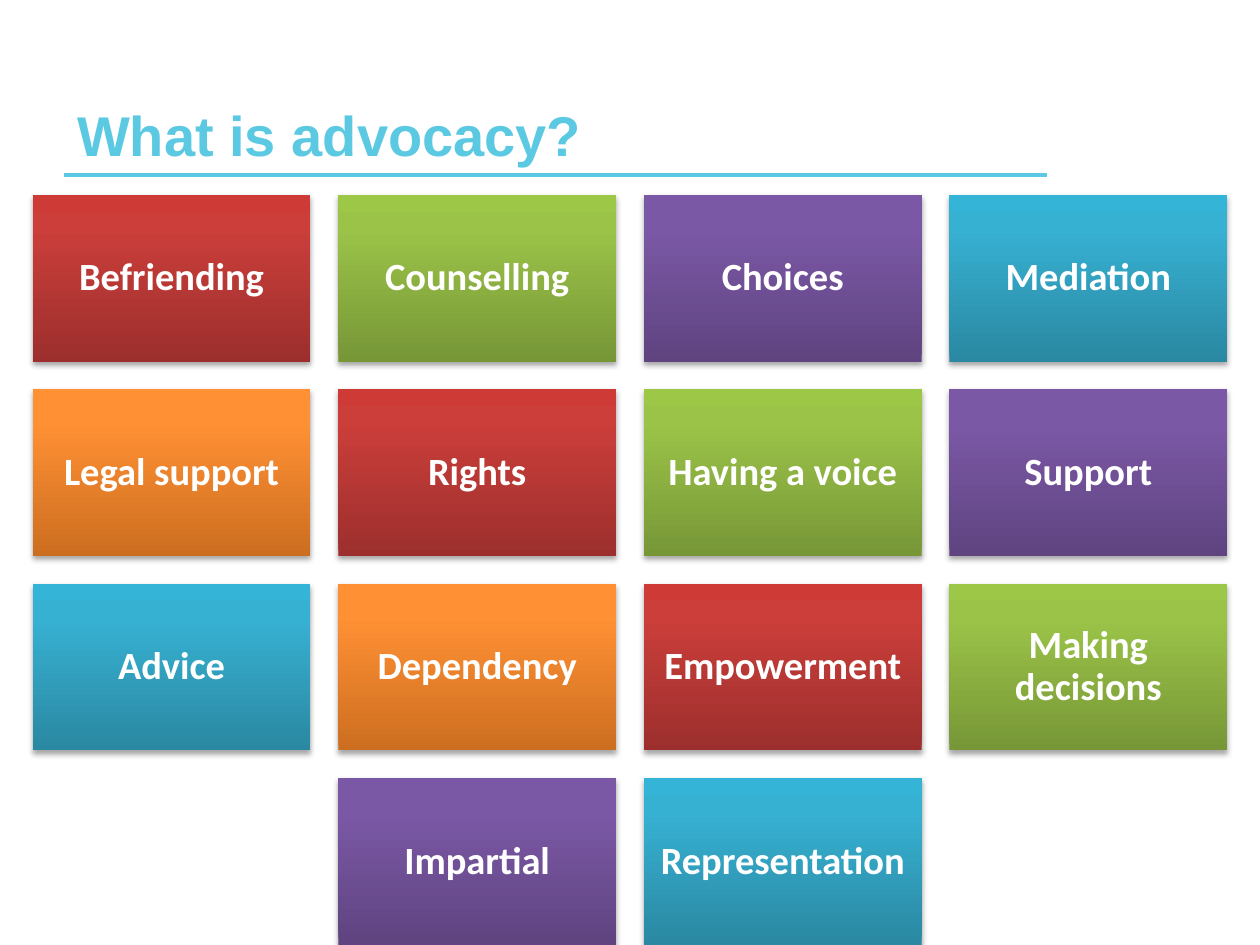
"""Build a slide of coloured tiles on the meaning of advocacy."""
from copy import deepcopy
from dataclasses import dataclass

from pptx import Presentation
from pptx.dml.color import RGBColor as Rgb
from pptx.enum.shapes import MSO_CONNECTOR as Link, MSO_SHAPE as Form
from pptx.enum.text import MSO_ANCHOR as Anchor, PP_ALIGN as Align
from pptx.oxml import parse_xml
from pptx.oxml.ns import nsdecls, qn
from pptx.slide import Slide
from pptx.text.text import TextFrame
from pptx.util import Cm, Pt

SKY = Rgb(0x5C, 0xC9, 0xE3)
WHITE = Rgb(0xFF, 0xFF, 0xFF)
RED = (Rgb(0x9C, 0x2F, 0x2D), Rgb(0xCB, 0x3E, 0x3A), Rgb(0xCE, 0x3B, 0x37))
GREEN = (Rgb(0x77, 0x97, 0x37), Rgb(0x9B, 0xC3, 0x48), Rgb(0x9D, 0xC7, 0x46))
PURPLE = (Rgb(0x5F, 0x44, 0x80), Rgb(0x7B, 0x58, 0xA6), Rgb(0x7C, 0x57, 0xA8))
BLUE = (Rgb(0x2A, 0x88, 0xA2), Rgb(0x37, 0xB1, 0xD2), Rgb(0x34, 0xB4, 0xD6))
ORANGE = (Rgb(0xCC, 0x6E, 0x20), Rgb(0xFF, 0x90, 0x34), Rgb(0xFF, 0x91, 0x36))
HUES = (RED, GREEN, PURPLE, BLUE, ORANGE)
STOPS = (0, 0.8, 1)

COLS = 4
LEFT, TOP = 0.66, 3.93
WIDE, HIGH = 5.6, 3.36
STEP_X, STEP_Y = 6.16, 3.92
EDGE, END, RULE = 1.3, 21.11, 3.53

WORDS = (
    "Befriending", "Counselling", "Choices", "Mediation",
    "Legal support", "Rights", "Having a voice", "Support",
    "Advice", "Dependency", "Empowerment", "Making decisions",
    "Impartial", "Representation",
)
SHADE = (
    f'<a:effectLst {nsdecls("a")}><a:outerShdw blurRad="40000" dist="23000" '
    'dir="5400000" rotWithShape="0"><a:srgbClr val="000000">'
    '<a:alpha val="35000"/></a:srgbClr></a:outerShdw></a:effectLst>'
)


@dataclass(frozen=True)
class Tile:
    """A word with its place and its gradient."""
    text: str
    left: float
    top: float
    hue: tuple[Rgb, ...]


def plan() -> list[Tile]:
    """Lay the words out in rows, with a short last row centred."""
    tiles = []
    for i, word in enumerate(WORDS):
        row, col = divmod(i, COLS)
        count = min(COLS, len(WORDS) - row * COLS)
        left = LEFT + (col + (COLS - count) / 2) * STEP_X
        tiles.append(Tile(word, left, TOP + row * STEP_Y, HUES[i % len(HUES)]))
    return tiles


def write(frame: TextFrame, text: str, face: str, size: int, ink: Rgb,
          align: Align, anchor: Anchor) -> None:
    """Put one bold run in a frame."""
    frame.word_wrap = True
    frame.vertical_anchor = anchor
    para = frame.paragraphs[0]
    para.alignment = align
    run = para.add_run()
    run.text = text
    font = run.font
    font.name, font.size, font.bold = face, Pt(size), True
    font.color.rgb = ink


def draw_tile(slide: Slide, tile: Tile) -> None:
    """Draw a shaded tile with its word in the middle."""
    box = slide.shapes.add_shape(
        Form.RECTANGLE, Cm(tile.left), Cm(tile.top), Cm(WIDE), Cm(HIGH))
    box.line.fill.background()
    fill = box.fill
    fill.gradient()
    fill.gradient_angle = 90
    props = box._element.spPr
    stops = props.find(qn("a:gradFill")).find(qn("a:gsLst"))
    stops.append(deepcopy(stops[0]))
    for stop, place, ink in zip(fill.gradient_stops, STOPS, tile.hue):
        stop.position = place
        stop.color.rgb = ink
    props.append(parse_xml(SHADE))
    frame = box.text_frame
    frame.margin_left = frame.margin_right = Cm(0.23)
    frame.margin_top = frame.margin_bottom = Cm(0.23)
    write(frame, tile.text, "Calibri", 22, WHITE, Align.CENTER, Anchor.MIDDLE)
    frame.paragraphs[0].line_spacing = 0.9


def draw_head(slide: Slide) -> None:
    """Set the title and the rule below it."""
    rule = slide.shapes.add_connector(
        Link.STRAIGHT, Cm(EDGE), Cm(RULE), Cm(END), Cm(RULE))
    rule.line.color.rgb = SKY
    rule.line.width = Pt(2)
    rule._element.spPr.append(parse_xml(f'<a:effectLst {nsdecls("a")}/>'))
    title = slide.shapes.title
    title.left, title.top = Cm(EDGE), Cm(0.74)
    title.width, title.height = Cm(END - EDGE), Cm(2.77)
    write(title.text_frame, "What is advocacy?", "Arial", 32, SKY,
          Align.LEFT, Anchor.BOTTOM)


def main() -> None:
    """Build and save the deck."""
    deck = Presentation()
    deck.slide_width, deck.slide_height = Cm(25.4), Cm(19.05)
    slide = deck.slides.add_slide(deck.slide_layouts[5])
    draw_head(slide)
    for tile in plan():
        draw_tile(slide, tile)
    deck.save("out.pptx")


if __name__ == "__main__":
    main()
